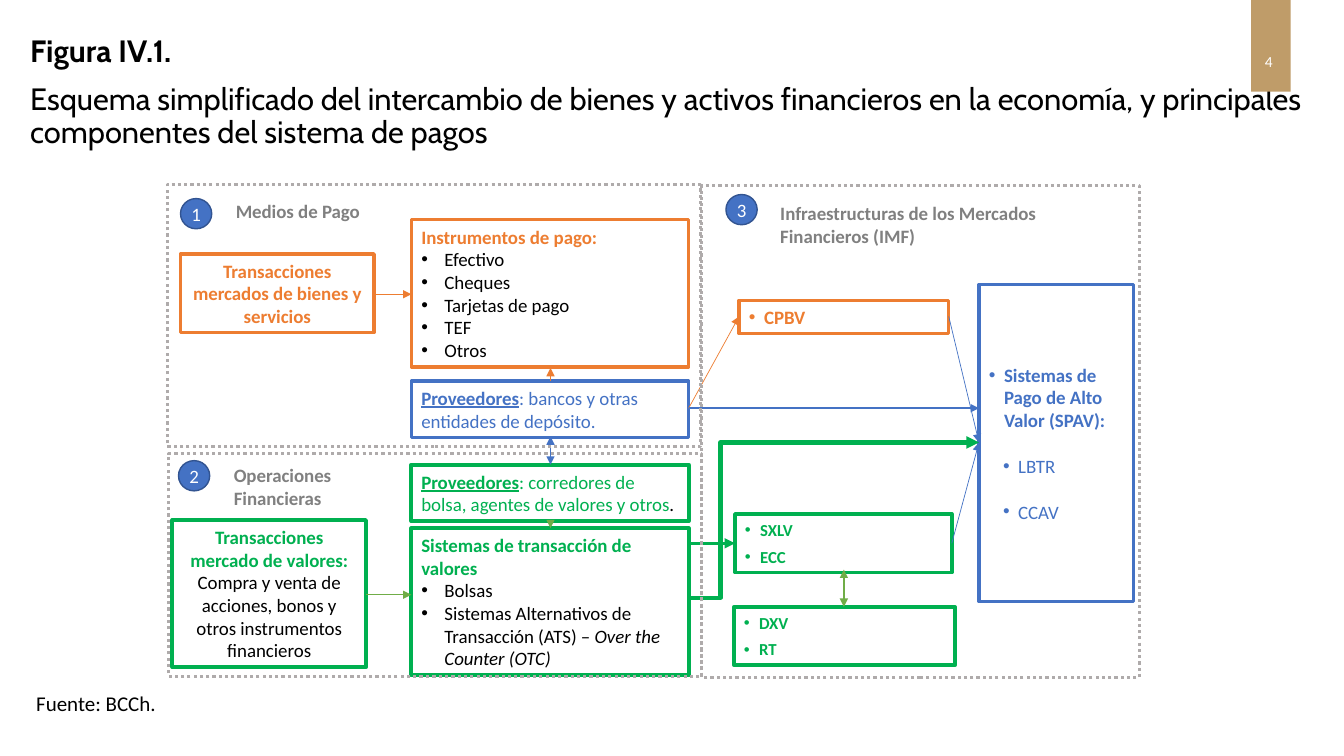
from dataclasses import dataclass

from lxml.etree import SubElement
from pptx import Presentation
from pptx.dml.color import RGBColor
from pptx.enum.dml import MSO_LINE
from pptx.enum.shapes import MSO_CONNECTOR as Link, MSO_SHAPE as Shape
from pptx.enum.text import MSO_ANCHOR as Anchor, MSO_AUTO_SIZE as AutoSize, PP_ALIGN as Align
from pptx.oxml.ns import qn
from pptx.util import Inches, Pt


@dataclass(frozen=True)
class Theme:
    orange: str = "ED7D31"
    green: str = "00B050"
    leaf: str = "70AD47"
    blue: str = "4472C4"
    navy: str = "325491"
    gray: str = "808080"
    frame: str = "AFABAB"
    tan: str = "BF9C69"
    white: str = "FFFFFF"
    black: str = "000000"
    text_font: str = "Calibri"
    title_font: str = "Cabin"
    title: float = 22
    source: float = 15
    text: float = 13.5
    small: float = 12
    number: float = 11


THEME = Theme()


@dataclass(frozen=True)
class Line:
    runs: tuple
    hang: float = 0
    margin: float = 0
    before: float = 0
    align: Align = Align.LEFT


def line(text, color, style="", **layout):
    return Line(((text, color, style),), **layout)


def bullet(text, color=THEME.black, style="", hang=0.23, margin=None, before=0):
    return line(text, color, style, hang=hang, margin=margin or hang, before=before)


def rgb(color):
    return RGBColor.from_string(color)


def set_indent(para, margin, hang):
    props = para._p.get_or_add_pPr()
    props.set("marL", str(Inches(margin)))
    props.set("indent", str(-Inches(hang)))
    if hang:
        SubElement(props, qn("a:buFont"), typeface="Arial")
        SubElement(props, qn("a:buChar"), char="•")
    else:
        SubElement(props, qn("a:buNone"))


def write(frame, lines, size=THEME.text, font=THEME.text_font, anchor=Anchor.TOP):
    frame.word_wrap = True
    frame.auto_size = AutoSize.NONE
    frame.vertical_anchor = anchor
    frame.text = "\n".join("" for _ in lines)
    for para, content in zip(frame.paragraphs, lines):
        set_indent(para, content.margin, content.hang)
        para.alignment = content.align
        para.space_before = Pt(content.before)
        for text, color, style in content.runs:
            span = para.add_run()
            span.text = text
            span.font.name = font
            span.font.size = Pt(size)
            span.font.color.rgb = rgb(color)
            span.font.bold = "b" in style
            span.font.italic = "i" in style
            span.font.underline = "u" in style


def add_block(page, place, kind=Shape.RECTANGLE, fill=None, border=None, width=1):
    block = page.shapes.add_shape(kind, *map(Inches, place))
    block.shadow.inherit = False
    if fill:
        block.fill.solid()
        block.fill.fore_color.rgb = rgb(fill)
    else:
        block.fill.background()
    if border:
        block.line.color.rgb = rgb(border)
        block.line.width = Pt(width)
    else:
        block.line.fill.background()
    return block


def add_box(page, place, color, width, lines, size=THEME.text):
    box = add_block(page, place, fill=THEME.white, border=color, width=width)
    write(box.text_frame, lines, size, anchor=Anchor.MIDDLE)


def add_frame(page, *place):
    add_block(page, place, border=THEME.frame, width=2.25).line.dash_style = MSO_LINE.ROUND_DOT


def add_badge(page, left, top, number):
    badge = add_block(page, (left, top, 0.31, 0.3), Shape.OVAL, THEME.blue, THEME.navy)
    frame = badge.text_frame
    frame.margin_left = frame.margin_right = frame.margin_top = frame.margin_bottom = 0
    write(frame, [line(number, THEME.white, align=Align.CENTER)], anchor=Anchor.MIDDLE)


def add_label(page, place, content, size=THEME.text):
    box = page.shapes.add_textbox(*map(Inches, place))
    write(box.text_frame, [content], size)


def add_arrow(page, start, end, color, width, double=False, bend=None):
    kind = Link.STRAIGHT if bend is None else Link.ELBOW
    arrow = page.shapes.add_connector(kind, *map(Inches, (*start, *end)))
    arrow.line.color.rgb = rgb(color)
    arrow.line.width = Pt(width)
    props = arrow._element.spPr
    stroke = props.find(qn("a:ln"))
    if double:
        SubElement(stroke, qn("a:headEnd"), type="triangle")
    SubElement(stroke, qn("a:tailEnd"), type="triangle")
    SubElement(props, qn("a:effectLst"))
    if bend is not None:
        guides = props.find(qn("a:prstGeom")).get_or_add_avLst()
        SubElement(guides, qn("a:gd"), name="adj1", fmla=f"val {round(bend * 100000)}")


def add_heading(page):
    title, body = page.placeholders
    title.element.getparent().remove(title.element)
    body.left, body.top, body.width, body.height = map(Inches, (0.2, 0.31, 12.93, 0.79))
    write(body.text_frame, [
        line("Figura IV.1.", THEME.black, "b"),
        line("Esquema simplificado del intercambio de bienes y activos financieros en la "
             "economía, y principales componentes del sistema de pagos", THEME.black, before=10),
    ], THEME.title, THEME.title_font)
    for para in body.text_frame.paragraphs:
        para.line_spacing = 0.9


def add_boxes(page):
    orange, green, blue = THEME.orange, THEME.green, THEME.blue
    add_box(page, (1.79, 2.52, 1.92, 0.78), orange, 2.5, [
        line("Transacciones mercados de bienes y servicios", orange, "b", align=Align.CENTER)])
    add_box(page, (1.71, 5.16, 1.92, 1.46), green, 2.75, [
        line("Transacciones mercado de valores:", green, "b", align=Align.CENTER),
        line("Compra y venta de acciones, bonos y otros instrumentos financieros",
             THEME.black, align=Align.CENTER)])
    means = ("Efectivo", "Cheques", "Tarjetas de pago", "TEF", "Otros")
    add_box(page, (4.08, 2.18, 2.75, 1.46), orange, 2.5, [
        line("Instrumentos de pago:", orange, "b"), *map(bullet, means)])
    add_box(page, (4.08, 5.24, 2.75, 1.46), green, 2.75, [
        line("Sistemas de transacción de valores", green, "b"),
        bullet("Bolsas"),
        Line((("Sistemas Alternativos de Transacción (ATS) – ", THEME.black, ""),
              ("Over the Counter (OTC)", THEME.black, "i")), 0.23, 0.23)])
    add_box(page, (7.33, 2.98, 2.08, 0.33), orange, 2.5, [bullet("CPBV", orange, "b", 0.15)])
    for place, first, second in (((7.29, 5.1, 2.15, 0.58), "SXLV", "ECC"),
                                 ((7.28, 6.02, 2.19, 0.58), "DXV", "RT")):
        add_box(page, place, green, 2.75, [
            bullet(first, green, "b", 0.15),
            bullet(second, green, "b", 0.15, before=4.5)], THEME.small)
    add_box(page, (9.71, 2.82, 1.53, 3.15), blue, 2.25, [
        bullet("Sistemas de Pago de Alto Valor (SPAV):", blue, "b", 0.15),
        *(bullet(name, blue, "", 0.15, 0.29, 16.5) for name in ("LBTR", "CCAV"))])
    add_box(page, (4.08, 3.78, 2.75, 0.56), blue, 2.25, [
        Line((("Proveedores", blue, "bu"), (": bancos y otras entidades de depósito.", blue, "")))])
    add_box(page, (4.08, 4.61, 2.75, 0.56), green, 2.75, [
        Line((("Proveedores", green, "bu"),
              (": corredores de bolsa, agentes de valores y otros", green, ""),
              (".", THEME.black, "")))])


def add_arrows(page):
    orange, green, leaf, blue = THEME.orange, THEME.green, THEME.leaf, THEME.blue
    add_arrow(page, (3.71, 2.92), (4.08, 2.92), orange, 0.5)
    add_arrow(page, (3.63, 5.9), (4.08, 5.9), leaf, 1)
    add_arrow(page, (6.83, 5.39), (7.29, 5.39), green, 2.5)
    add_arrow(page, (9.44, 5.39), (9.71, 4.39), blue, 0.5)
    add_arrow(page, (9.41, 3.14), (9.71, 4.39), blue, 0.5)
    add_arrow(page, (5.46, 3.78), (5.46, 3.65), orange, 0.5)
    add_arrow(page, (6.83, 4.05), (7.33, 3.14), orange, 0.5)
    add_arrow(page, (5.46, 5.17), (5.46, 5.24), leaf, 1)
    add_arrow(page, (8.37, 6.02), (8.37, 5.65), leaf, 1, double=True)
    add_arrow(page, (5.46, 4.61), (5.46, 4.33), blue, 0.5, double=True)
    add_arrow(page, (6.83, 5.93), (9.71, 4.39), green, 3, bend=0.11)
    add_arrow(page, (6.83, 4.05), (9.71, 4.05), blue, 1.5)


def add_sections(page):
    add_badge(page, 1.79, 1.97, "1")
    add_badge(page, 1.77, 4.57, "2")
    add_badge(page, 7.2, 1.93, "3")
    add_frame(page, 1.66, 1.83, 5.29, 2.6)
    add_frame(page, 1.67, 4.5, 5.29, 2.21)
    add_frame(page, 6.96, 1.84, 4.34, 4.88)
    for place, name in (((2.24, 1.93, 1.67, 0.33), "Medios de Pago"),
                        ((2.22, 4.55, 1.21, 0.56), "Operaciones Financieras"),
                        ((7.64, 1.95, 3.61, 0.56),
                         "Infraestructuras de los Mercados Financieros (IMF)")):
        add_label(page, place, line(name, THEME.gray, "b"))


def main():
    deck = Presentation()
    deck.slide_width, deck.slide_height = Inches(13.33), Inches(7.5)
    page = deck.slides.add_slide(deck.slide_layouts[1])
    add_block(page, (12.41, 0, 0.39, 0.91), fill=THEME.tan)
    add_label(page, (12.2, 0.47, 0.77, 0.37),
              line("4", THEME.white, align=Align.CENTER), THEME.number)
    add_heading(page)
    add_boxes(page)
    add_arrows(page)
    add_sections(page)
    add_label(page, (0.26, 6.8, 1.65, 0.35), line("Fuente: BCCh.", THEME.black), THEME.source)
    deck.save("out.pptx")


if __name__ == "__main__":
    main()
